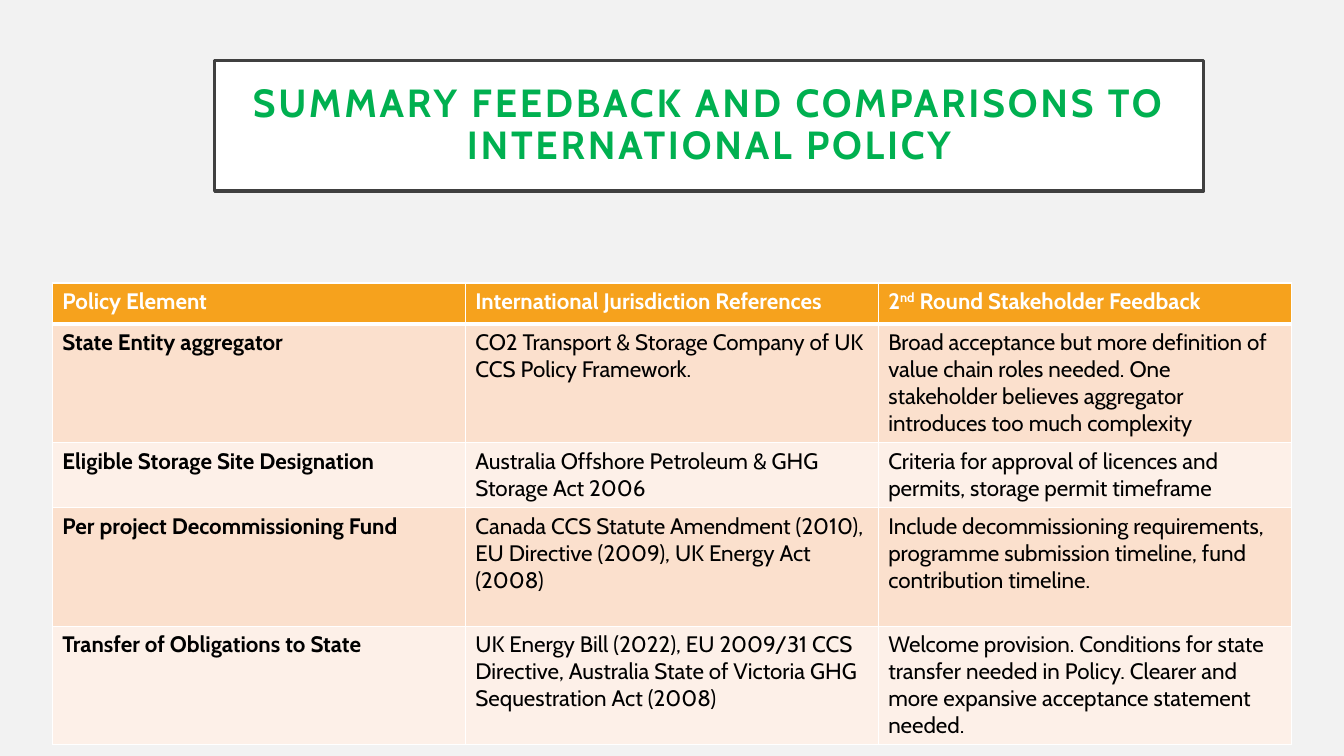
import pptx
import pptx.dml.color
import pptx.enum.text
import pptx.util
from dataclasses import dataclass
from lxml import etree
from pptx.util import Cm, Pt


@dataclass(frozen=True)
class Theme:
    font: str = "Cabin"
    back: str = "F2F2F2"
    white: str = "FFFFFF"
    black: str = "000000"
    frame: str = "404040"
    green: str = "00B050"
    head: str = "F6A21D"
    bands: tuple = ("FBE0CD", "FDF0E8")
    title: int = 28
    body: int = 16


THEME = Theme()

HEADS = ("Policy Element", "International Jurisdiction References",
         (("2", 0), ("nd", 30), (" Round Stakeholder Feedback", 0)))
ROWS = (
    ("State Entity aggregator",
     "CO2 Transport & Storage Company of UK CCS Policy Framework.",
     "Broad acceptance but more definition of value chain roles needed. "
     "One stakeholder believes aggregator introduces too much complexity"),
    ("Eligible Storage Site Designation",
     "Australia Offshore Petroleum & GHG Storage Act 2006",
     "Criteria for approval of licences and permits, storage permit timeframe"),
    ("Per project Decommissioning Fund",
     "Canada CCS Statute Amendment (2010), EU Directive (2009), "
     "UK Energy Act (2008)",
     "Include decommissioning requirements, programme submission timeline, "
     "fund contribution timeline."),
    ("Transfer of Obligations to State",
     "UK Energy Bill (2022), EU 2009/31 CCS Directive, "
     "Australia State of Victoria GHG Sequestration Act (2008)",
     "Welcome provision. Conditions for state transfer needed in Policy. "
     "Clearer and more expansive acceptance statement needed."),
)
HIGHS = (1.04, 2.99, 1.63, 2.99, 2.99)


def paint(fill, tone):
    fill.solid()
    fill.fore_color.rgb = pptx.dml.color.RGBColor.from_string(tone)


def write(frame, text, size=THEME.body, tone=THEME.black, bold=False, space=0):
    """Fill the first paragraph with a string or (string, raise %) pairs."""
    para = frame.paragraphs[0]
    for part, lift in ((text, 0),) if isinstance(text, str) else text:
        run = para.add_run()
        run.text = part
        font = run.font
        font.name, font.size, font.bold = THEME.font, Pt(size), bold
        font.color.rgb = pptx.dml.color.RGBColor.from_string(tone)
        props = run._r.get_or_add_rPr()
        if space:
            props.set("spc", str(space * 100))
        if lift:
            props.set("baseline", str(lift * 1000))
    return para


def edge(cell, **sides):
    """Draw white borders; each side (L, R, T, B) gets a width in points."""
    props = cell._tc.get_or_add_tcPr()
    space = pptx.oxml.ns.nsdecls("a")
    for side, width in sides.items():
        props.append(etree.fromstring(
            f'<a:ln{side} {space} w="{Pt(width)}"><a:solidFill>'
            f'<a:srgbClr val="{THEME.white}"/></a:solidFill></a:ln{side}>'))


def banner(slide, left, top, width, height):
    box = slide.shapes.title
    box.left, box.top, box.width, box.height = left, top, width, height
    paint(box.fill, THEME.white)
    paint(box.line.fill, THEME.frame)
    box.line.width = Pt(2.5)
    frame = box.text_frame
    frame.word_wrap = True
    frame.auto_size = pptx.enum.text.MSO_AUTO_SIZE.NONE
    frame.vertical_anchor = pptx.enum.text.MSO_ANCHOR.MIDDLE
    frame.margin_left = frame.margin_right = Cm(0.5)
    frame.margin_top = frame.margin_bottom = Cm(0.5)
    para = write(frame, "SUMMARY FEEDBACK AND COMPARISONS TO INTERNATIONAL POLICY",
                 size=THEME.title, tone=THEME.green, bold=True, space=2)
    para.alignment = pptx.enum.text.PP_ALIGN.CENTER
    para.line_spacing = 0.9


def grid(slide, left, top, width, height):
    rows = (HEADS, *ROWS)
    table = slide.shapes.add_table(len(rows), len(HEADS),
                                   left, top, width, height).table
    for col in table.columns:
        col.width = width // len(HEADS)
    for r, row in enumerate(rows):
        table.rows[r].height = Cm(HIGHS[r])
        head = r == 0
        for c, text in enumerate(row):
            cell = table.cell(r, c)
            edge(cell, L=1, R=1, T=3 if r == 1 else 1, B=3 if head else 1)
            paint(cell.fill, THEME.head if head else THEME.bands[(r - 1) % 2])
            write(cell.text_frame, text, bold=head or c == 0,
                  tone=THEME.white if head else THEME.black)


def main():
    deck = pptx.Presentation()
    deck.slide_width, deck.slide_height = Cm(33.87), Cm(19.05)
    slide = deck.slides.add_slide(deck.slide_layouts[5])
    paint(slide.background.fill, THEME.back)
    banner(slide, Cm(5.41), Cm(1.52), Cm(24.92), Cm(3.3))
    grid(slide, Cm(1.32), Cm(7.13), Cm(31.22), Cm(sum(HIGHS)))
    deck.save("out.pptx")


if __name__ == "__main__":
    main()
